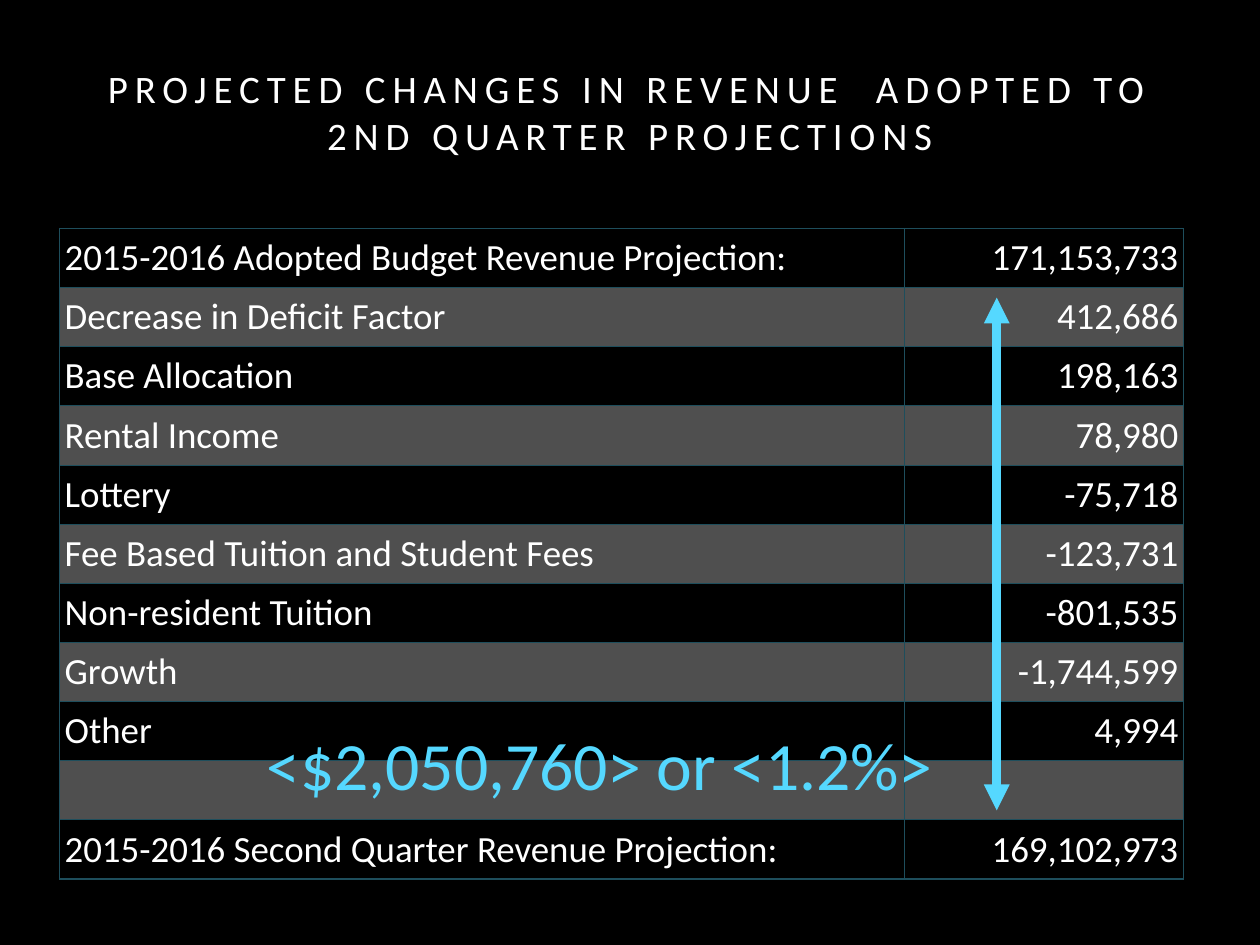
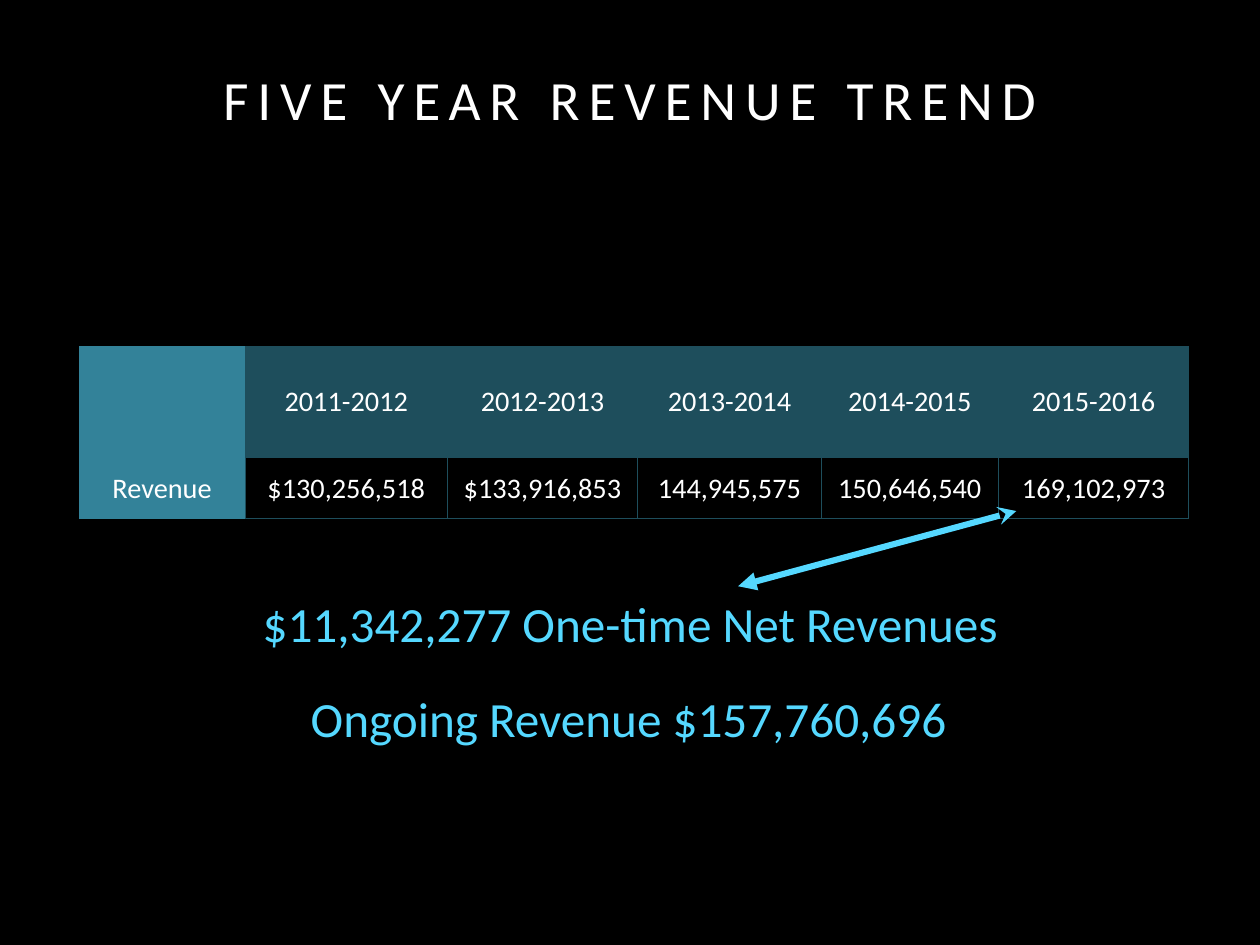
from lxml.etree import SubElement
from pptx import Presentation
from pptx.dml.color import RGBColor as RGB
from pptx.enum.shapes import MSO_CONNECTOR as CONN
from pptx.enum.text import MSO_ANCHOR as ANCHOR, MSO_AUTO_SIZE as FIT, PP_ALIGN as AL
from pptx.oxml.ns import qn
from pptx.util import Inches, Pt

COLORS = {"back": "000000", "text": "FFFFFF", "band": "4F4F4F", "head": "1E4E5C",
          "label": "338299", "accent": "55D8FF"}
FONT = "Calibri"
INSET = Inches(0.06)
MARGINS = dict.fromkeys(("margin_left", "margin_right", "margin_top", "margin_bottom"), INSET)
TITLE_BOX = (5.06, 6.28, 89.87, 14.62)
PLAIN_TABLE = "{2D5ABB26-0587-4C30-8999-92F81FD0307C}"

CHANGES = [
    ("2015-2016 Adopted Budget Revenue Projection:", "171,153,733"),
    ("Decrease in Deficit Factor", "412,686"),
    ("Base Allocation", "198,163"),
    ("Rental Income", "78,980"),
    ("Lottery", "-75,718"),
    ("Fee Based Tuition and Student Fees", "-123,731"),
    ("Non-resident Tuition", "-801,535"),
    ("Growth", "-1,744,599"),
    ("Other", "4,994"),
    ("", ""),
    ("2015-2016 Second Quarter Revenue Projection:", "169,102,973"),
]
TREND = [
    ("", "2011-2012", "2012-2013", "2013-2014", "2014-2015", "2015-2016"),
    ("Revenue", "$130,256,518", "$133,916,853", "144,945,575", "150,646,540", "169,102,973"),
]


def rgb(name):
    return RGB.from_string(COLORS[name])


def apply(obj, values):
    for name, value in values.items():
        setattr(obj, name, value)


class Deck:
    def __init__(self, width, height):
        self.prs = Presentation()
        apply(self.prs, {"slide_width": Inches(width), "slide_height": Inches(height)})
        fill = self.prs.slide_master.background.fill
        fill.solid()
        fill.fore_color.rgb = rgb("back")
        self.slide = None

    def x(self, percent):
        return round(self.prs.slide_width * percent / 100)

    def y(self, percent):
        return round(self.prs.slide_height * percent / 100)

    def box(self, left, top, width, height):
        return self.x(left), self.y(top), self.x(width), self.y(height)

    def add_text(self, tf, text, size, color, align):
        p = tf.paragraphs[0]
        p.alignment = align
        r = p.add_run()
        r.text = text
        apply(r.font, {"name": FONT, "size": Pt(size)})
        r.font.color.rgb = rgb(color)
        return r

    def add_slide(self, title, size, spacing):
        self.slide = self.prs.slides.add_slide(self.prs.slide_layouts[5])
        sp = self.slide.shapes.title
        apply(sp, dict(zip(("left", "top", "width", "height"), self.box(*TITLE_BOX))))
        tf = sp.text_frame
        apply(tf, {**MARGINS, "word_wrap": True, "auto_size": FIT.NONE,
                   "vertical_anchor": ANCHOR.TOP})
        r = self.add_text(tf, title, size, "text", AL.CENTER)
        r._r.get_or_add_rPr().set("spc", str(round(spacing * 100)))

    def text(self, text, box, size):
        tf = self.slide.shapes.add_textbox(*self.box(*box)).text_frame
        apply(tf, {**MARGINS, "word_wrap": False, "auto_size": FIT.SHAPE_TO_FIT_TEXT,
                   "vertical_anchor": ANCHOR.MIDDLE})
        self.add_text(tf, text, size, "accent", AL.CENTER)

    def arrow(self, start, end, width, head, tail):
        sp = self.slide.shapes.add_connector(
            CONN.STRAIGHT, self.x(start[0]), self.y(start[1]), self.x(end[0]), self.y(end[1]))
        sp.line.width = Pt(width)
        sp.line.color.rgb = rgb("accent")
        sp_pr = sp._element.spPr
        ln = sp_pr.find(qn("a:ln"))
        for tag, kind in (("a:headEnd", head), ("a:tailEnd", tail)):
            SubElement(ln, qn(tag)).set("type", kind)
        SubElement(sp_pr, qn("a:effectLst"))

    def border(self, cell):
        tc_pr = cell._tc.get_or_add_tcPr()
        for side in ("L", "R", "T", "B"):
            ln = SubElement(tc_pr, qn("a:ln" + side), w=str(int(Pt(1))))
            fill = SubElement(ln, qn("a:solidFill"))
            SubElement(fill, qn("a:srgbClr"), val=COLORS["head"])

    def table(self, data, at, cols, rows, size, aligns, fill_of, bordered):
        box = self.box(*at, sum(cols), sum(rows))
        tbl = self.slide.shapes.add_table(len(rows), len(cols), *box).table
        apply(tbl, {"first_row": False, "horz_banding": False})
        tbl._tbl.tblPr.find(qn("a:tableStyleId")).text = PLAIN_TABLE
        for col, width in zip(tbl.columns, cols):
            col.width = self.x(width)
        for row, height in zip(tbl.rows, rows):
            row.height = self.y(height)
        for i, values in enumerate(data):
            for j, value in enumerate(values):
                cell = tbl.cell(i, j)
                apply(cell, {**MARGINS, "vertical_anchor": ANCHOR.MIDDLE})
                if bordered(i, j):
                    self.border(cell)
                fill = fill_of(i, j)
                if fill:
                    cell.fill.solid()
                    cell.fill.fore_color.rgb = rgb(fill)
                else:
                    cell.fill.background()
                if value:
                    self.add_text(cell.text_frame, value, size, "text", aligns[j])


def trend_fill(i, j):
    if j == 0:
        return "label"
    return "head" if i == 0 else None


def main():
    deck = Deck(14.22, 10.67)

    deck.add_slide("PROJECTED CHANGES IN REVENUE  ADOPTED TO 2ND QUARTER PROJECTIONS", 31.6, 5.6)
    deck.table(CHANGES, (4.71, 24.18), (67.09, 22.15), [6.26] * len(CHANGES), 30,
               (AL.LEFT, AL.RIGHT), lambda i, j: "band" if i % 2 else None,
               lambda i, j: True)
    deck.arrow((79.11, 85.75), (79.11, 31.49), 7, "triangle", "triangle")
    deck.text("<$2,050,760> or <1.2%>", (17.86, 75.35, 59.49, 10.78), 55)

    deck.add_slide("FIVE YEAR REVENUE TREND", 45, 7.2)
    deck.table(TREND, (6.26, 36.64), (13.22, 16.03, 15.12, 14.56, 14.06, 15.12),
               (11.81, 6.47), 23, [AL.CENTER] * 6, trend_fill,
               lambda i, j: i > 0 and j > 0)
    deck.text("Ongoing Revenue $157,760,696", (21.94, 71.88, 55.91, 8.25), 40)
    deck.text("$11,342,277 One-time Net Revenues", (18, 61.76, 64.06, 8.25), 40)
    deck.arrow((58.58, 62.04), (80.66, 54.08), 5, "triangle", "stealth")

    deck.prs.save("out.pptx")


if __name__ == "__main__":
    main()
